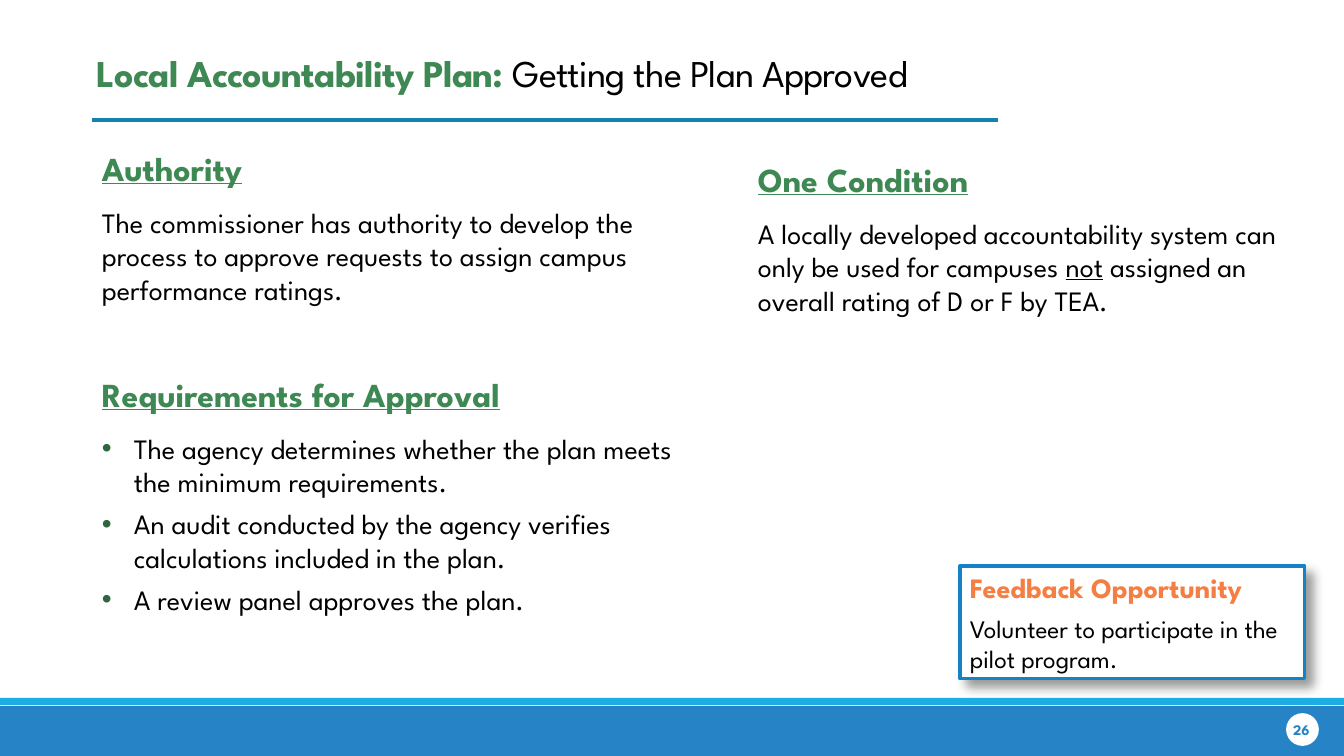
import dataclasses

import pptx
import pptx.dml.color
import pptx.enum.shapes
import pptx.enum.text
import pptx.oxml
import pptx.oxml.ns
import pptx.util

EMU_PER_PX = 914400 / 100.8
SHAPES = pptx.enum.shapes.MSO_SHAPE
ALIGN = pptx.enum.text.PP_ALIGN
ANCHOR = pptx.enum.text.MSO_ANCHOR


@dataclasses.dataclass(frozen=True)
class Theme:
    face: str = "League Spartan"
    ink: str = "000000"
    paper: str = "FFFFFF"
    green: str = "3E8853"
    bullet: str = "2F663E"
    orange: str = "F57F43"
    rule: str = "1482AC"
    card_edge: str = "1582C6"
    footer: str = "2683C6"
    footer_edge: str = "1CADE4"
    title_size: float = 27
    heading_size: float = 24
    body_size: float = 20
    note_size: float = 18
    page_size: float = 10.5


def px(length):
    return pptx.util.Emu(round(length * EMU_PER_PX))


def rgb(colour):
    return pptx.dml.color.RGBColor.from_string(colour)


def add_xml(parent, xml):
    """Append a DrawingML element written with the a: prefix."""
    tag, rest = xml[:-1].split(None, 1) if " " in xml.split(">")[0] else (xml[:-2], "/")
    namespace = pptx.oxml.ns.nsdecls("a")
    parent.append(pptx.oxml.parse_xml(f"{tag} {namespace} {rest}>"))


class Slide:
    def __init__(self, presentation, theme):
        self.theme = theme
        self.slide = presentation.slides.add_slide(presentation.slide_layouts[6])
        self.shapes = self.slide.shapes

    def shape(self, kind, box, fill, line=None, weight=0):
        shape = self.shapes.add_shape(kind, *map(px, box))
        shape.shadow.inherit = False
        shape.fill.solid()
        shape.fill.fore_color.rgb = rgb(fill)
        if line:
            shape.line.color.rgb = rgb(line)
            shape.line.width = pptx.util.Pt(weight)
        else:
            shape.line.fill.background()
        return shape

    def rule(self, left, right, y, colour, weight):
        rule = self.shapes.add_connector(
            pptx.enum.shapes.MSO_CONNECTOR.STRAIGHT, px(left), px(y), px(right), px(y))
        rule.line.color.rgb = rgb(colour)
        rule.line.width = pptx.util.Pt(weight)
        add_xml(rule._element.spPr, "<a:effectLst/>")

    def frame(self, box):
        frame = self.shapes.add_textbox(*map(px, box)).text_frame
        frame.word_wrap = True
        return frame

    def paragraph(self, frame, text, size, colour, bold=False, underline=False,
                  after=0, bullet=False, align=ALIGN.LEFT):
        """Add a paragraph; parts of the text between underscores are underlined."""
        paragraph = frame.paragraphs[0]
        if paragraph.runs:
            paragraph = frame.add_paragraph()
        for index, part in enumerate(text.split("_")):
            run = paragraph.add_run()
            run.text = part
            if index % 2:
                run.font.underline = True
        if bullet:
            properties = paragraph._p.get_or_add_pPr()
            properties.set("marL", str(px(32)))
            properties.set("indent", str(px(-32)))
            add_xml(properties, f'<a:buClr xmlns:x="x"><a:srgbClr val="{self.theme.bullet}"/></a:buClr>')
            add_xml(properties, '<a:buFont typeface="Arial"/>')
            add_xml(properties, '<a:buChar char="•"/>')
        paragraph.alignment = align
        paragraph.space_after = pptx.util.Pt(after)
        font = paragraph.font
        font.name, font.size = self.theme.face, pptx.util.Pt(size)
        font.bold, font.color.rgb = bold, rgb(colour)
        if underline:
            font.underline = True
        return paragraph

    def title(self, box, topic, subject):
        theme = self.theme
        title = self.paragraph(self.frame(box), topic, theme.title_size, theme.green, bold=True)
        rest = title.add_run()
        rest.text = subject
        rest.font.bold = False
        rest.font.color.rgb = rgb(theme.ink)
        for run in title.runs:
            run._r.get_or_add_rPr().set("spc", "-50")

    def section(self, box, heading, lines, bullet=False):
        theme, frame = self.theme, self.frame(box)
        self.paragraph(frame, heading, theme.heading_size, theme.green,
                       bold=True, underline=True, after=12)
        for line in lines:
            self.paragraph(frame, line, theme.body_size, theme.ink, after=6, bullet=bullet)

    def card(self, box, heading, note):
        theme = self.theme
        card = self.shape(SHAPES.RECTANGLE, box, theme.paper, theme.card_edge, 2.25)
        effects = card._element.spPr.find(pptx.oxml.ns.qn("a:effectLst"))
        add_xml(effects, '<a:outerShdw blurRad="101600" dist="88900" dir="2700000" algn="tl">'
                '<a:srgbClr val="000000"><a:alpha val="40000"/></a:srgbClr></a:outerShdw>')
        frame = card.text_frame
        frame.word_wrap = True
        frame.vertical_anchor = ANCHOR.TOP
        self.paragraph(frame, heading, theme.body_size, theme.orange, bold=True, after=6)
        self.paragraph(frame, note, theme.note_size, theme.ink)

    def page_number(self, circle, box, number):
        theme = self.theme
        self.shape(SHAPES.OVAL, circle, theme.paper, theme.paper, 1.25)
        frame = self.frame(box)
        frame.margin_left = frame.margin_right = 0
        frame.vertical_anchor = ANCHOR.MIDDLE
        self.paragraph(frame, number, theme.page_size, theme.footer, bold=True, align=ALIGN.CENTER)


def main():
    presentation = pptx.Presentation()
    presentation.slide_width, presentation.slide_height = px(1344), px(756)
    theme = Theme()
    slide = Slide(presentation, theme)

    slide.shape(SHAPES.RECTANGLE, (0, 706, 1344, 50), theme.footer)
    slide.shape(SHAPES.RECTANGLE, (0, 698, 1344, 7), theme.footer_edge)
    slide.rule(92, 998, 120, theme.rule, 2.25)
    slide.title((87, 45, 979, 64), "Local Accountability Plan: ", "Getting the Plan Approved")
    slide.section((92, 369, 609, 254), "Requirements for Approval", [
        "The agency determines whether the plan meets the minimum requirements.",
        "An audit conducted by the agency verifies calculations included in the plan.",
        "A review panel approves the plan.",
    ], bullet=True)
    slide.section((92, 143, 609, 169), "Authority", [
        "The commissioner has authority to develop the process to approve requests "
        "to assign campus performance ratings.",
    ])
    slide.section((748, 154, 570, 204), "One Condition", [
        "A locally developed accountability system can only be used for campuses "
        "_not_ assigned an overall rating of D or F by TEA.",
    ])
    slide.card((960, 566, 345, 113), "Feedback Opportunity",
               "Volunteer to participate in the pilot program.")
    slide.page_number((1287, 714, 31, 31), (1283, 710, 37, 40), "26")
    presentation.save("out.pptx")


if __name__ == "__main__":
    main()
